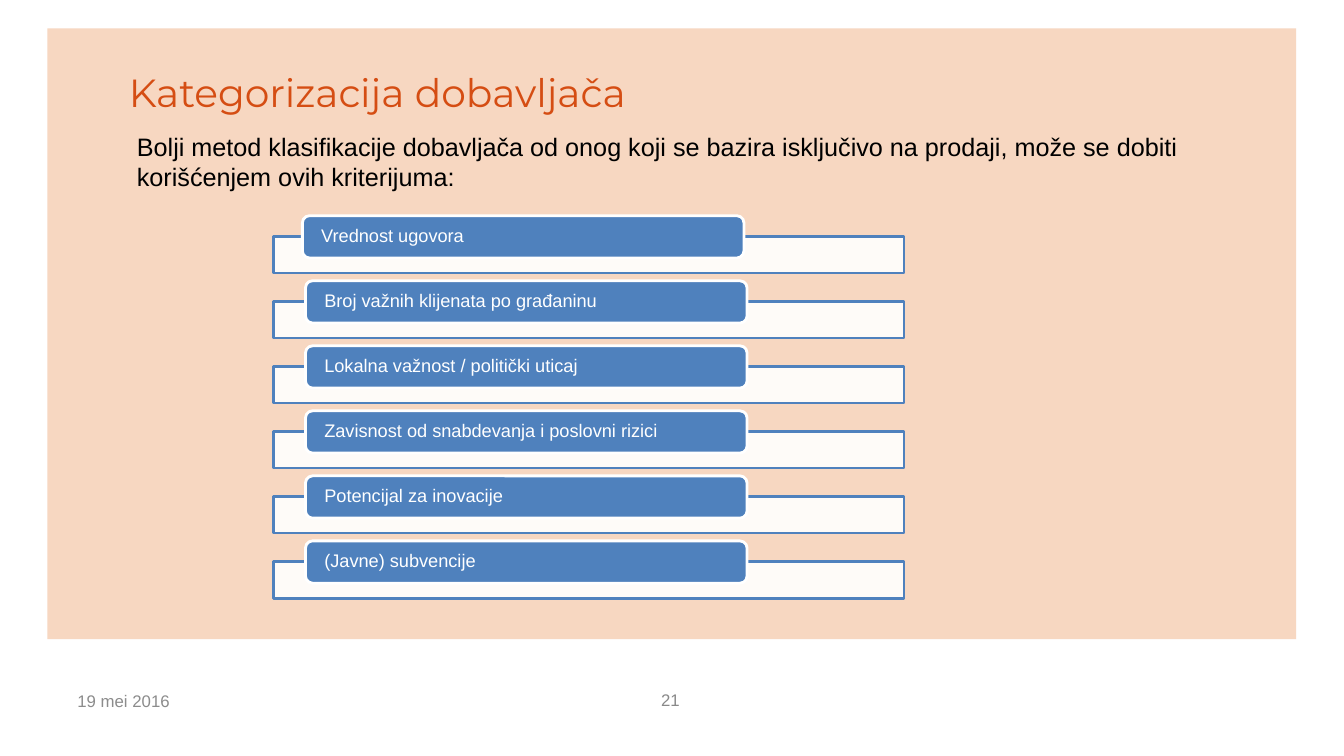
from lxml import etree
from pptx import Presentation
from pptx.dml.color import RGBColor
from pptx.enum.shapes import MSO_SHAPE as Kind
from pptx.enum.text import MSO_ANCHOR as Anchor, PP_ALIGN as Align
from pptx.oxml.ns import qn
from pptx.util import Pt

# Content
TITLE = "Kategorizacija dobavljača"
INTRO = ("Bolji metod klasifikacije dobavljača od onog koji se bazira isključivo "
         "na prodaji, može se dobiti korišćenjem ovih kriterijuma:")
CRITERIA = [
    "Vrednost ugovora",
    "Broj važnih klijenata po građaninu",
    "Lokalna važnost / politički uticaj",
    "Zavisnost od snabdevanja i poslovni rizici",
    "Potencijal za inovacije",
    "(Javne) subvencije",
]
DATE = "19 mei 2016"
PAGE = "21"

# Colours
PEACH = RGBColor(0xF7, 0xD7, 0xC1)
ORANGE = RGBColor(0xD5, 0x4D, 0x13)
BLUE = RGBColor(0x4F, 0x81, 0xBD)
WHITE = RGBColor(0xFF, 0xFF, 0xFF)
BLACK = RGBColor(0, 0, 0)
GREY = RGBColor(0x89, 0x89, 0x89)
DIM = RGBColor(0x8C, 0x8C, 0x8C)

# Criteria list layout, in points
TOP = 154.1
PITCH = 46.45
BAR_X, BAR_DROP, BAR_W, BAR_H = 195.1, 15, 450.7, 25.9
TAB_X, TAB_W, TAB_H = 218.2, 315.4, 30.2
FIRST_X = 216

deck = Presentation()
deck.slide_width, deck.slide_height = Pt(960), Pt(540)
slide = deck.slides.add_slide(deck.slide_layouts[6])


def write(shape, text, size, color, font="Arial", anchor=Anchor.MIDDLE):
    frame = shape.text_frame
    frame.word_wrap = True
    frame.vertical_anchor = anchor
    para = frame.paragraphs[0]
    para.text = text
    para.alignment = Align.LEFT
    para.font.size, para.font.name = Pt(size), font
    para.font.color.rgb = color
    return frame


def add_text(box, *style, **more):
    write(slide.shapes.add_textbox(*map(Pt, box)), *style, **more)


def add_box(kind, box, fill, line=None):
    shape = slide.shapes.add_shape(kind, *map(Pt, box))
    shape.shadow.inherit = False
    shape.fill.solid()
    shape.fill.fore_color.rgb = fill
    if line is None:
        shape.line.fill.background()
    else:
        shape.line.color.rgb = line
        shape.line.width = Pt(2)
    return shape


def set_alpha(shape, percent):
    color = shape.fill._xPr.find(qn("a:solidFill"))[0]
    etree.SubElement(color, qn("a:alpha")).set("val", str(percent * 1000))


# Panel, footer and title
add_box(Kind.RECTANGLE, (33.8, 20.2, 892.1, 436.3), PEACH)
add_text((465.1, 485.3, 83.5, 28.8), PAGE, 12, GREY)
add_text((48.2, 486, 223.9, 28.8), DATE, 12, DIM)
add_text((85, 31.7, 803.5, 68.4), TITLE, 28, ORANGE, font="Montserrat")

# Criteria: a pale bar with a blue tab over its top edge
for row, name in enumerate(CRITERIA):
    y = TOP + row * PITCH
    bar = add_box(Kind.RECTANGLE, (BAR_X, y + BAR_DROP, BAR_W, BAR_H), WHITE, BLUE)
    set_alpha(bar, 90)
    x = TAB_X if row else FIRST_X
    tab = add_box(Kind.ROUNDED_RECTANGLE, (x, y, TAB_W, TAB_H), BLUE, WHITE)
    frame = write(tab, name, 13, WHITE)
    frame.margin_left = frame.margin_right = Pt(12)
    frame.margin_top = frame.margin_bottom = 0
    frame.paragraphs[0].line_spacing = 0.9

# Introduction
add_text((90.7, 90, 801.4, 51.1), INTRO, 18, BLACK, anchor=Anchor.TOP)

deck.save("out.pptx")
